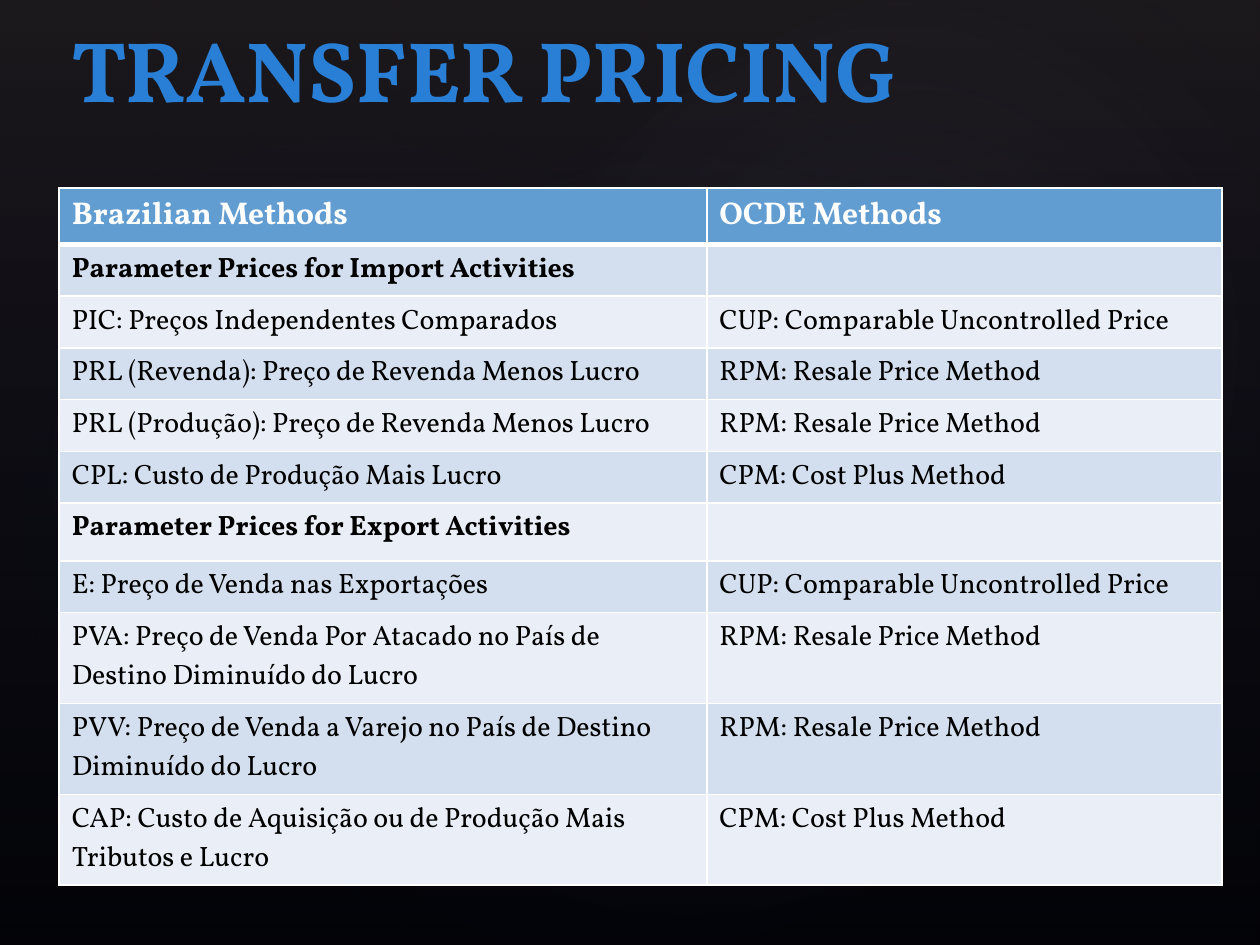
from dataclasses import dataclass

from lxml.etree import SubElement
from pptx import Presentation
from pptx.dml.color import RGBColor
from pptx.enum.shapes import MSO_SHAPE
from pptx.enum.text import MSO_ANCHOR, MSO_AUTO_SIZE, PP_ALIGN
from pptx.oxml import parse_xml
from pptx.oxml.ns import nsdecls, qn
from pptx.util import Inches, Pt


@dataclass(frozen=True)
class Theme:
    font: str = "Vollkorn"
    backdrop: str = "000000"
    veil_top: str = "504652"
    veil_bottom: str = "242852"
    glow: str = "C4BCC6"
    title: str = "297FD5"
    header: str = "629DD1"
    bands: tuple = ("D3DFEE", "EAEFF7")
    body: str = "000000"
    light: str = "FFFFFF"
    title_size: int = 49
    header_size: int = 18
    body_size: int = 16


THEME = Theme()

HEADINGS = ("Brazilian Methods", "OCDE Methods")
CUP = "CUP: Comparable Uncontrolled Price"
RPM = "RPM: Resale Price Method"
CPM = "CPM: Cost Plus Method"
METHODS = [
    ("Parameter Prices for Import Activities", ""),
    ("PIC: Preços Independentes Comparados", CUP),
    ("PRL (Revenda): Preço de Revenda Menos Lucro", RPM),
    ("PRL (Produção): Preço de Revenda Menos Lucro", RPM),
    ("CPL: Custo de Produção Mais Lucro", CPM),
    ("Parameter Prices for Export Activities", ""),
    ("E: Preço de Venda nas Exportações", CUP),
    ("PVA: Preço de Venda Por Atacado no País de Destino Diminuído do Lucro", RPM),
    ("PVV: Preço de Venda a Varejo no País de Destino Diminuído do Lucro", RPM),
    ("CAP: Custo de Aquisição ou de Produção Mais Tributos e Lucro", CPM),
]
COLUMN_WIDTHS = (5.14, 4.09)
ROW_HEIGHT = 0.41
EXPORT_ROW, EXPORT_HEIGHT = 6, 0.46
GLOWS = [
    ((1.5, 1.14, 7.92, 6.24), 328.7, 7),
    ((-0.3, 1.28, 6.06, 4.9), 294.3, 8),
    ((3.58, 0.13, 7.09, 5.2), 328.7, 8),
]
LINEAR = '<a:lin ang="5400000" scaled="0"/>'
RADIAL = ('<a:path path="circle"><a:fillToRect l="50000" t="50000" '
          'r="50000" b="50000"/></a:path>')


def style_run(run, size, color, bold):
    run.font.name = THEME.font
    run.font.size = Pt(size)
    run.font.bold = bold
    run.font.color.rgb = RGBColor.from_string(color)


def add_gradient(slide, preset, box, stops, direction, rotation=0):
    layer = slide.shapes.add_shape(preset, *map(Inches, box))
    layer.rotation = rotation
    layer.shadow.inherit = False
    layer.line.fill.background()
    stop_xml = "".join(
        f'<a:gs pos="{position * 1000}"><a:srgbClr val="{color}">'
        f'<a:alpha val="{alpha * 1000}"/></a:srgbClr></a:gs>'
        for position, color, alpha in stops
    )
    gradient = parse_xml(
        f'<a:gradFill {nsdecls("a")} rotWithShape="1"><a:gsLst>{stop_xml}</a:gsLst>'
        f'{direction}</a:gradFill>'
    )
    layer._element.spPr.find(qn("a:prstGeom")).addnext(gradient)


def add_backdrop(slide):
    backdrop = slide.background.fill
    backdrop.solid()
    backdrop.fore_color.rgb = RGBColor.from_string(THEME.backdrop)
    add_gradient(slide, MSO_SHAPE.RECTANGLE, (0, 0, 10, 7.5),
                 [(0, THEME.veil_top, 36), (100, THEME.veil_bottom, 10)], LINEAR)
    for box, rotation, alpha in GLOWS:
        add_gradient(slide, MSO_SHAPE.OVAL, box,
                     [(0, THEME.glow, alpha), (58, THEME.veil_bottom, 0),
                      (100, THEME.veil_bottom, 0)], RADIAL, rotation)


def add_title(slide, text):
    title = slide.shapes.title
    title.left, title.top = Inches(0.47), Inches(0)
    title.width, title.height = Inches(8.25), Inches(1)
    slide.shapes._spTree.append(title._element)
    frame = title.text_frame
    frame.word_wrap = True
    frame.auto_size = MSO_AUTO_SIZE.NONE
    frame.vertical_anchor = MSO_ANCHOR.BOTTOM
    heading = frame.paragraphs[0]
    heading.alignment = PP_ALIGN.LEFT
    run = heading.add_run()
    run.text = text
    style_run(run, THEME.title_size, THEME.title, True)


def set_borders(cell, widths):
    properties = cell._tc.get_or_add_tcPr()
    for index, (side, width) in enumerate(widths.items()):
        border = parse_xml(
            f'<a:{side} {nsdecls("a")} w="{Pt(width)}"><a:solidFill>'
            f'<a:srgbClr val="{THEME.light}"/></a:solidFill></a:{side}>'
        )
        properties.insert(index, border)


def fill_cell(cell, text, fill, size, color, bold, top=1, bottom=1):
    cell.fill.solid()
    cell.fill.fore_color.rgb = RGBColor.from_string(fill)
    set_borders(cell, {"lnL": 1, "lnR": 1, "lnT": top, "lnB": bottom})
    paragraph = cell.text_frame.paragraphs[0]
    if text:
        run = paragraph.add_run()
        run.text = text
        style_run(run, size, color, bold)
    else:
        SubElement(paragraph._p, qn("a:endParaRPr"), sz=str(size * 100))


def add_methods_table(slide):
    row_count = len(METHODS) + 1
    methods = slide.shapes.add_table(
        row_count, len(HEADINGS), Inches(0.47), Inches(1.49),
        Inches(sum(COLUMN_WIDTHS)), Inches(ROW_HEIGHT * row_count),
    ).table
    for column, width in zip(methods.columns, COLUMN_WIDTHS):
        column.width = Inches(width)
    for index, row in enumerate(methods.rows):
        row.height = Inches(EXPORT_HEIGHT if index == EXPORT_ROW else ROW_HEIGHT)
    for column, heading in enumerate(HEADINGS):
        fill_cell(methods.cell(0, column), heading, THEME.header,
                  THEME.header_size, THEME.light, True, bottom=3)
    for index, pair in enumerate(METHODS, start=1):
        is_section = not pair[1]
        for column, text in enumerate(pair):
            fill_cell(methods.cell(index, column), text, THEME.bands[(index - 1) % 2],
                      THEME.body_size, THEME.body, is_section,
                      top=3 if index == 1 else 1)


def main():
    presentation = Presentation()
    presentation.slide_width = Inches(10)
    presentation.slide_height = Inches(7.5)
    slide = presentation.slides.add_slide(presentation.slide_layouts[5])
    add_backdrop(slide)
    add_title(slide, "TRANSFER PRICING")
    add_methods_table(slide)
    presentation.save("out.pptx")


if __name__ == "__main__":
    main()
